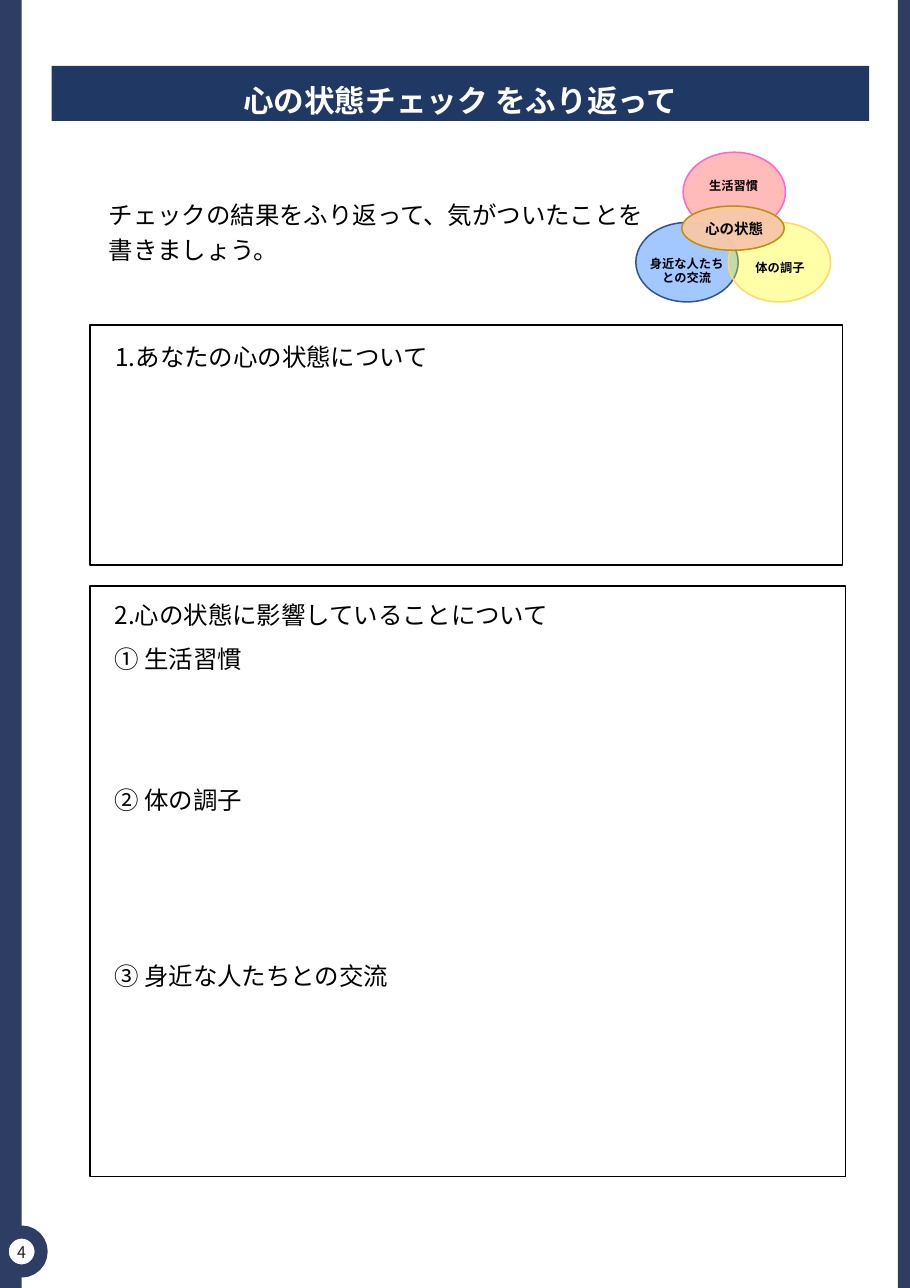
"""Build the worksheet page for looking back on the mental state check."""
from lxml.etree import SubElement
from pptx import Presentation
from pptx.dml.color import RGBColor
from pptx.enum.shapes import MSO_SHAPE as Preset
from pptx.enum.text import MSO_ANCHOR as Anchor, MSO_AUTO_SIZE as AutoSize, PP_ALIGN as Align
from pptx.oxml.ns import qn
from pptx.util import Cm, Pt

FONT = "Noto Sans CJK JP"
NAVY = RGBColor(0x2E, 0x3D, 0x63)
TITLE_BLUE = RGBColor(0x20, 0x38, 0x64)
WHITE = RGBColor(0xFF, 0xFF, 0xFF)
BLACK = RGBColor(0, 0, 0)
PAGE_GREY = RGBColor(0x23, 0x1F, 0x20)
BLUE, BLUE_EDGE = RGBColor(0, 0x66, 0xFF), RGBColor(0x2F, 0x55, 0x97)
RED, PINK_EDGE = RGBColor(0xFF, 0, 0), RGBColor(0xFF, 0x66, 0xCC)
YELLOW, YELLOW_EDGE = RGBColor(0xFF, 0xFF, 0), RGBColor(0xFF, 0xD9, 0x66)
PEACH, GOLD_EDGE = RGBColor(0xF6, 0xC8, 0xA8), RGBColor(0xBF, 0x90, 0)


def draw(preset, place, fill, edge=None, width=1, opacity=100):
    shape = slide.shapes.add_shape(preset, *map(Cm, place))
    shape.shadow.inherit = False
    shape.fill.solid()
    shape.fill.fore_color.rgb = fill
    if opacity < 100:
        color = shape.fill._xPr.find(qn("a:solidFill"))[0]
        SubElement(color, qn("a:alpha"), val=str(opacity * 1000))
    if edge is None:
        shape.line.fill.background()
    else:
        shape.line.color.rgb = edge
        shape.line.width = Pt(width)


def write(text, place, holder=None, size=16, color=BLACK, bold=False, align=Align.LEFT,
          spacing=None, before=(), insets=(0.25, 0.13, 0.25, 0.13),
          anchor=Anchor.TOP, wrap=True):
    box = holder or slide.shapes.add_textbox(0, 0, 0, 0)
    box.left, box.top, box.width, box.height = map(Cm, place)
    frame = box.text_frame
    frame.text = text
    frame.auto_size = AutoSize.NONE
    frame.word_wrap = wrap
    frame.vertical_anchor = anchor
    (frame.margin_left, frame.margin_top,
     frame.margin_right, frame.margin_bottom) = map(Cm, insets)
    for number, line in enumerate(frame.paragraphs):
        line.alignment = align
        line.line_spacing = spacing
        line.space_before = Pt(before[number] if before else 0)
        font = line.runs[0].font
        font.name, font.size, font.bold = FONT, Pt(size), bold
        font.color.rgb = color
        SubElement(font._element, qn("a:ea"), typeface=FONT)
        if holder is not None:
            props = line._p.get_or_add_pPr()
            props.set("marL", "0")
            props.set("indent", "0")
            SubElement(props, qn("a:buNone"))


deck = Presentation()
deck.slide_width, deck.slide_height = Cm(20.98), Cm(29.69)
slide = deck.slides.add_slide(deck.slide_layouts[1])
title, topics = slide.placeholders

draw(Preset.RECTANGLE, (0, 0, 0.5, 29.69), NAVY)
draw(Preset.OVAL, (0.05, 28.4, 0.9, 0.9), WHITE, NAVY, 8.5)
draw(Preset.RECTANGLE, (20.7, 0, 0.28, 29.69), NAVY)
write("4", (0.25, 28.58, 0.5, 0.53), size=10.5, color=PAGE_GREY, align=Align.CENTER,
      insets=(0, 0.05, 0, 0))

for answer_box in ((2.08, 13.51, 17.42, 13.61), (2.08, 7.49, 17.35, 5.54)):
    draw(Preset.RECTANGLE, answer_box, WHITE, BLACK)

title.fill.solid()
title.fill.fore_color.rgb = TITLE_BLUE
write("心の状態チェック をふり返って", (1.19, 1.52, 18.85, 1.27), title, size=20,
      color=WHITE, bold=True, align=Align.CENTER, spacing=1.5,
      insets=(0.25, 0, 0.25, 0.13), anchor=Anchor.MIDDLE)

slide.shapes._spTree.append(topics._element)
row = 23
write("2.心の状態に影響していることについて\n① 生活習慣\n② 体の調子\n③ 身近な人たちとの交流",
      (2.39, 13.56, 14.5, 11), topics, spacing=Pt(row), before=(0, 6, 3 * row, 4 * row))

indented = (0.48, 0.13, 0.25, 0.13)
write("チェックの結果をふり返って、気がついたことを書きましょう。",
      (2.03, 4.34, 13.46, 1.78), spacing=Pt(row), insets=indented)
write("1.あなたの心の状態について", (2.18, 7.62, 13.46, 0.97), spacing=Pt(row), insets=indented)

factors = (
    ("身近な人たち\nとの交流", (14.66, 5.13, 2.36, 1.83), BLUE, BLUE_EDGE, 36,
     (14.4, 5.77, 2.87, 0.99), 8, True),
    ("生活習慣", (15.75, 3.51, 2.36, 1.83), RED, PINK_EDGE, 27,
     (16.05, 3.99, 1.73, 0.64), 8, False),
    ("体の調子", (16.79, 5.13, 2.36, 1.83), YELLOW, YELLOW_EDGE, 34,
     (17.12, 5.87, 1.73, 0.64), 8, False),
    ("心の状態", (15.72, 4.75, 2.36, 1.02), PEACH, GOLD_EDGE, 97,
     (15.72, 4.93, 2.41, 0.71), 9.5, True),
)
for factor, oval, fill, edge, opacity, label, size, wrap in factors:
    draw(Preset.OVAL, oval, fill, edge, opacity=opacity)
    write(factor, label, size=size, bold=True, align=Align.CENTER, wrap=wrap)

deck.save("out.pptx")
